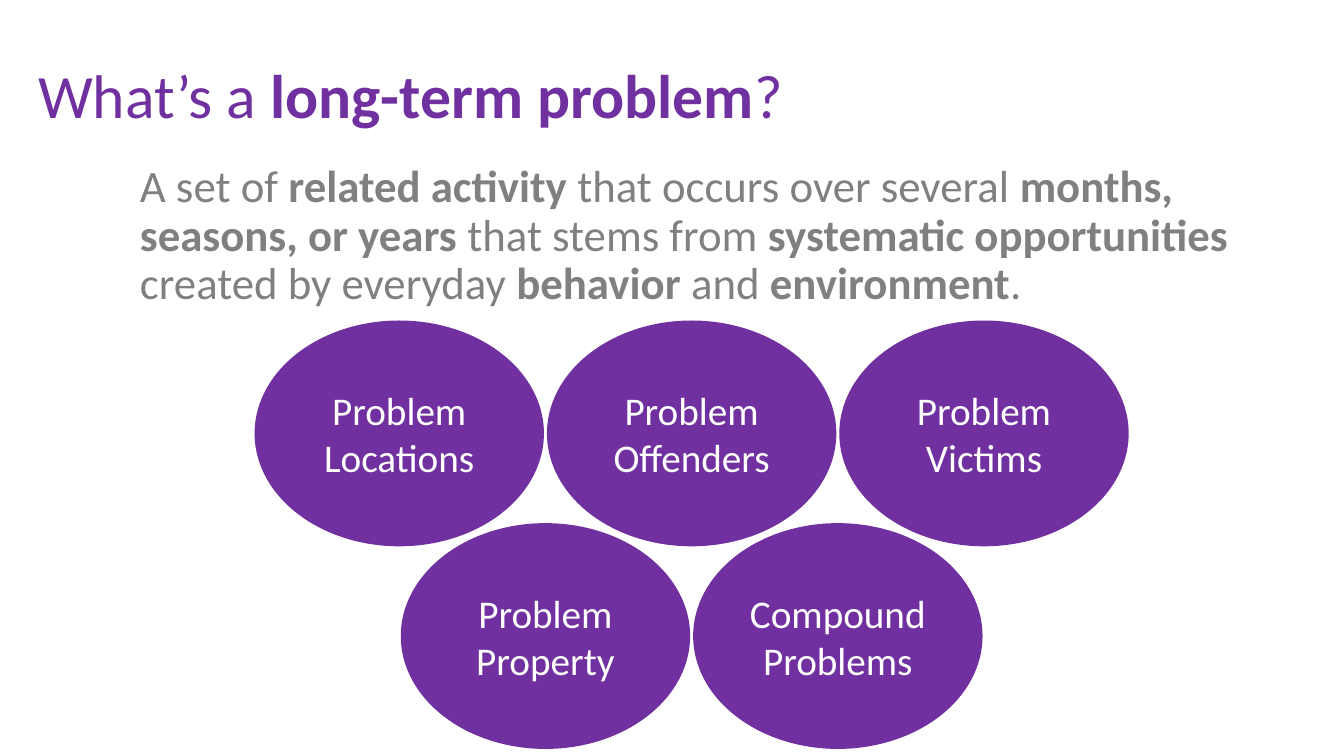
from pptx import Presentation
from pptx.dml.color import RGBColor
from pptx.enum.shapes import MSO_SHAPE as Shape
from pptx.enum.text import MSO_ANCHOR as Anchor, PP_ALIGN as Align
from pptx.util import Inches, Pt

PURPLE = RGBColor(0x70, 0x30, 0xA0)
GRAY = RGBColor(0x80, 0x80, 0x80)
WHITE = RGBColor(0xFF, 0xFF, 0xFF)
FONT = "Calibri"

TITLE = [("What’s a ", False), ("long-term problem", True), ("?", False)]
BODY = [
    ("A set of ", False),
    ("related activity ", True),
    ("that occurs over several ", False),
    ("months, seasons, or years", True),
    (" that stems from ", False),
    ("systematic opportunities", True),
    (" created by everyday ", False),
    ("behavior", True),
    (" and ", False),
    ("environment", True),
    (".", False),
]
ROWS = [
    ["Problem Locations", "Problem Offenders", "Problem Victims"],
    ["Problem Property", "Compound Problems"],
]
MID, TOP = 6.86, 3.18
WIDE, HIGH = 2.87, 2.24
STEP, DROP = 2.9, 2.01


def style(run, size, color, bold=False):
    font = run.font
    font.name, font.size, font.bold = FONT, Pt(size), bold
    font.color.rgb = color


def add_text(slide, box, parts, size, color, anchor, before=0):
    frame = slide.shapes.add_textbox(*map(Inches, box)).text_frame
    frame.word_wrap = True
    frame.vertical_anchor = anchor
    para = frame.paragraphs[0]
    para.line_spacing = 0.9
    para.space_before = Pt(before)
    for words, bold in parts:
        run = para.add_run()
        run.text = words
        style(run, size, color, bold)


def add_oval(slide, left, top, label):
    oval = slide.shapes.add_shape(
        Shape.OVAL, Inches(left), Inches(top), Inches(WIDE), Inches(HIGH))
    oval.shadow.inherit = False
    oval.fill.solid()
    oval.fill.fore_color.rgb = PURPLE
    oval.line.fill.background()
    frame = oval.text_frame
    frame.word_wrap = True
    frame.vertical_anchor = Anchor.MIDDLE
    frame.text = label
    para = frame.paragraphs[0]
    para.alignment = Align.CENTER
    style(para.runs[0], 28, WHITE)


def main():
    deck = Presentation()
    deck.slide_width, deck.slide_height = Inches(13.33), Inches(7.5)
    slide = deck.slides.add_slide(deck.slide_layouts[6])
    add_text(slide, (0.28, 0.25, 11.5, 1.45), TITLE, 44, PURPLE, Anchor.MIDDLE)
    add_text(slide, (1.29, 1.58, 11.5, 1.76), BODY, 32, GRAY, Anchor.TOP, 10)
    for i, row in enumerate(ROWS):
        left = MID - (WIDE + STEP * (len(row) - 1)) / 2
        for j, label in enumerate(row):
            add_oval(slide, left + j * STEP, TOP + i * DROP, label)
    deck.save("out.pptx")


if __name__ == "__main__":
    main()
